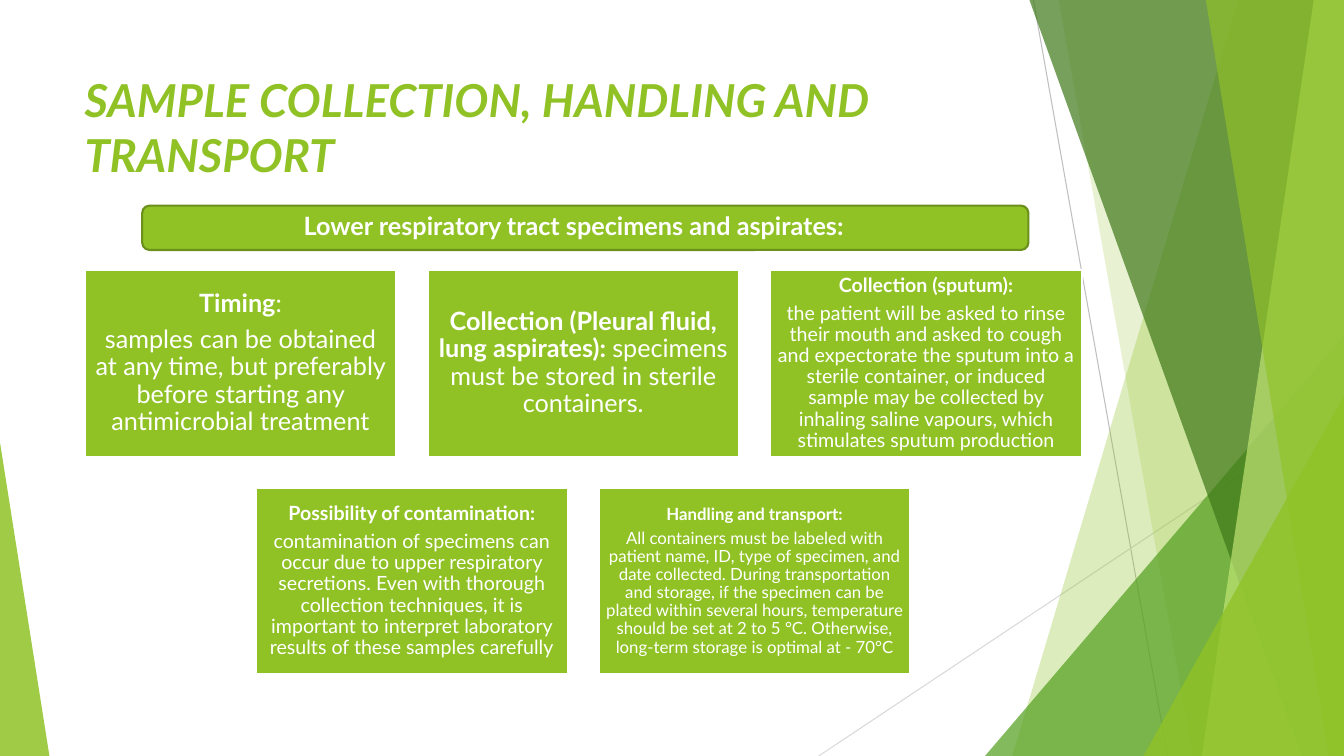
"""Build a slide on collecting, handling and transporting respiratory samples."""
from lxml import etree
from pptx import Presentation
from pptx import util as u
from pptx.dml.color import RGBColor
from pptx.enum import shapes, text
from pptx.oxml.ns import qn

GREEN = RGBColor(0x90, 0xC2, 0x26)
MID_GREEN = RGBColor(0x54, 0xA0, 0x21)
DARK_GREEN = RGBColor(0x3F, 0x78, 0x19)
PALE_GREEN = RGBColor(0xC0, 0xE4, 0x74)
EDGE_GREEN = RGBColor(0x6B, 0x90, 0x1C)
WHITE = RGBColor(0xFF, 0xFF, 0xFF)
GREY = RGBColor(0xBF, 0xBF, 0xBF)
LIGHT_GREY = RGBColor(0xD9, 0xD9, 0xD9)
WIDTH, HEIGHT = 13.33, 7.5


def paint(shape, color, opacity=100, edge=None):
    """Fill a shape, with an optional opacity in percent and edge colour."""
    shape.shadow.inherit = False
    shape.fill.solid()
    shape.fill.fore_color.rgb = color
    if opacity < 100:
        tint = shape.fill._xPr.find(qn("a:solidFill"))[0]
        etree.SubElement(tint, qn("a:alpha"), val=str(opacity * 1000))
    if edge is None:
        shape.line.fill.background()
    else:
        shape.line.color.rgb = edge
        shape.line.width = u.Pt(1.5)


def write(para, words, size, color=WHITE, bold=False, italic=False):
    """Add one run to a paragraph."""
    span = para.add_run()
    span.text = words
    span.font.name = "Lato"
    span.font.size = u.Pt(size)
    span.font.color.rgb = color
    span.font.bold = bold
    span.font.italic = italic


deck = Presentation()
deck.slide_width, deck.slide_height = u.Inches(WIDTH), u.Inches(HEIGHT)
page = deck.slides.add_slide(deck.slide_layouts[6])

rays = [(10.25, 0, 11.58, HEIGHT, GREY), (WIDTH, 4.03, 8.12, HEIGHT, LIGHT_GREY)]
for x1, y1, x2, y2, color in rays:
    ray = page.shapes.add_connector(
        shapes.MSO_CONNECTOR.STRAIGHT,
        u.Inches(x1), u.Inches(y1), u.Inches(x2), u.Inches(y2))
    ray.line.color.rgb = color
    ray.line.width = u.Pt(0.75)
    etree.SubElement(ray._element.spPr, qn("a:effectLst"))

facets = [
    ("band", 12.28, 10.04, GREEN, 30),
    ("band", 10.5, 11.83, GREEN, 20),
    ("right", 3.56, 4.17, MID_GREEN, 72),
    ("band", 10.21, 12.91, DARK_GREEN, 70),
    ("band", 13.03, 11.92, PALE_GREEN, 70),
    ("band", 11.96, 13.18, GREEN, 65),
    ("right", 1.99, 3.57, GREEN, 80),
    ("left", 0.49, 3.11, GREEN, 85),
]
for kind, first, second, color, opacity in facets:
    if kind == "band":
        outline = page.shapes.build_freeform(u.Inches(first), 0)
        corners = [(WIDTH, 0), (WIDTH, HEIGHT), (second, HEIGHT)]
        outline.add_line_segments([(u.Inches(x), u.Inches(y)) for x, y in corners])
        facet = outline.convert_to_shape()
    else:
        left = WIDTH - first if kind == "right" else 0
        facet = page.shapes.add_shape(
            shapes.MSO_SHAPE.ISOSCELES_TRIANGLE, u.Inches(left),
            u.Inches(HEIGHT - second), u.Inches(first), u.Inches(second))
        facet.adjustments[0] = 1 if kind == "right" else 0
    paint(facet, color, opacity)

title = page.shapes.add_textbox(
    u.Inches(0.74), u.Inches(0.67), u.Inches(9.4), u.Inches(1.44))
title.text_frame.word_wrap = True
write(title.text_frame.paragraphs[0], "SAMPLE COLLECTION, HANDLING AND TRANSPORT",
      32.4, GREEN, bold=True, italic=True)

CARD_W, CARD_H, GAP = 3.09, 1.85, 0.31
LEFT, TOP = 0.84, 2.68
cards = [
    (0, 0, 18, [[("Timing", True), (":", False)],
                [("samples can be obtained at any time, but preferably before "
                  "starting any antimicrobial treatment", False)]]),
    (1, 0, 18, [[("Collection (Pleural fluid, lung aspirates): ", True),
                 ("specimens must be stored in sterile containers.", False)]]),
    (2, 0, 14, [[("Collection (sputum):", True)],
                [("the patient will be asked to rinse their mouth and asked to cough "
                  "and expectorate the sputum into a sterile container, or induced "
                  "sample may be collected by inhaling saline vapours, which "
                  "stimulates sputum production", False)]]),
    (0.5, 1, 14, [[("Possibility of contamination:", True)],
                  [("contamination of specimens can occur due to upper respiratory "
                    "secretions. Even with thorough collection techniques, it is "
                    "important to interpret laboratory results of these samples "
                    "carefully", False)]]),
    (1.5, 1, 12, [[("Handling and transport:", True)],
                  [("All containers must be labeled with patient name, ID, type of "
                    "specimen, and date collected. During transportation and storage, "
                    "if the specimen can be plated within several hours, temperature "
                    "should be set at 2 to 5 °C. Otherwise, long-term storage is "
                    "optimal at - 70°C", False)]]),
]
for column, row, size, paras in cards:
    card = page.shapes.add_shape(
        shapes.MSO_SHAPE.RECTANGLE,
        u.Inches(LEFT + column * (CARD_W + GAP)), u.Inches(TOP + row * (CARD_H + GAP)),
        u.Inches(CARD_W), u.Inches(CARD_H))
    paint(card, GREEN, edge=WHITE)
    frame = card.text_frame
    frame.word_wrap = True
    frame.vertical_anchor = text.MSO_ANCHOR.MIDDLE
    inset = u.Pt(size * 0.28)
    frame.margin_left = frame.margin_right = inset
    frame.margin_top = frame.margin_bottom = inset
    for index, spans in enumerate(paras):
        para = frame.add_paragraph() if index else frame.paragraphs[0]
        para.alignment = text.PP_ALIGN.CENTER
        para.line_spacing = 0.9
        para.space_after = u.Pt(size * 0.35)
        for words, bold in spans:
            write(para, words, size, bold=bold)

banner = page.shapes.add_shape(
    shapes.MSO_SHAPE.ROUNDED_RECTANGLE,
    u.Inches(1.41), u.Inches(2.04), u.Inches(8.79), u.Inches(0.44))
paint(banner, GREEN, edge=EDGE_GREEN)

heading = page.shapes.add_textbox(
    u.Inches(1.73), u.Inches(2.04), u.Inches(7.92), u.Inches(0.44))
heading.text_frame.word_wrap = True
para = heading.text_frame.paragraphs[0]
para.alignment = text.PP_ALIGN.CENTER
write(para, "Lower respiratory tract specimens and aspirates:", 18, bold=True)

deck.save("out.pptx")
